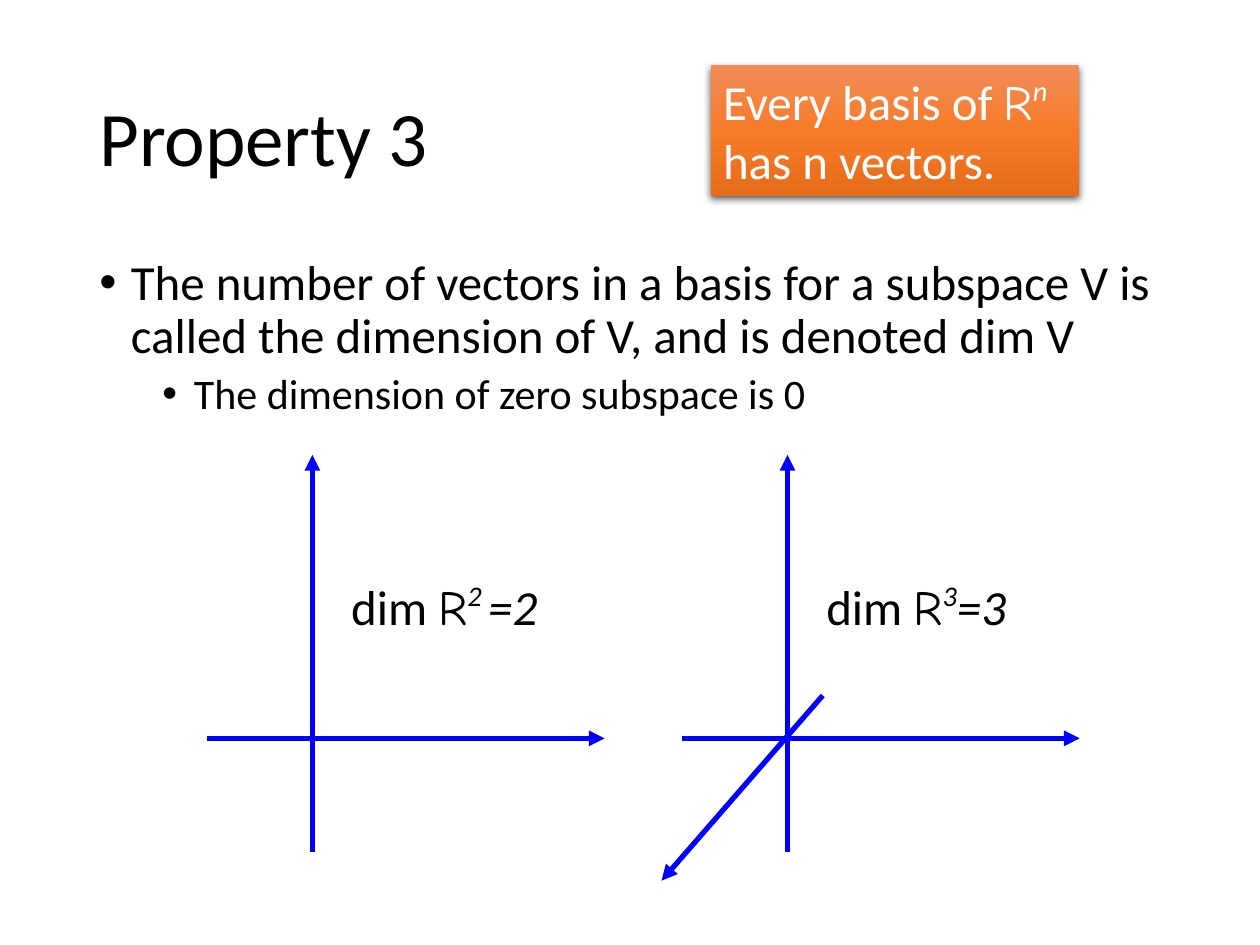
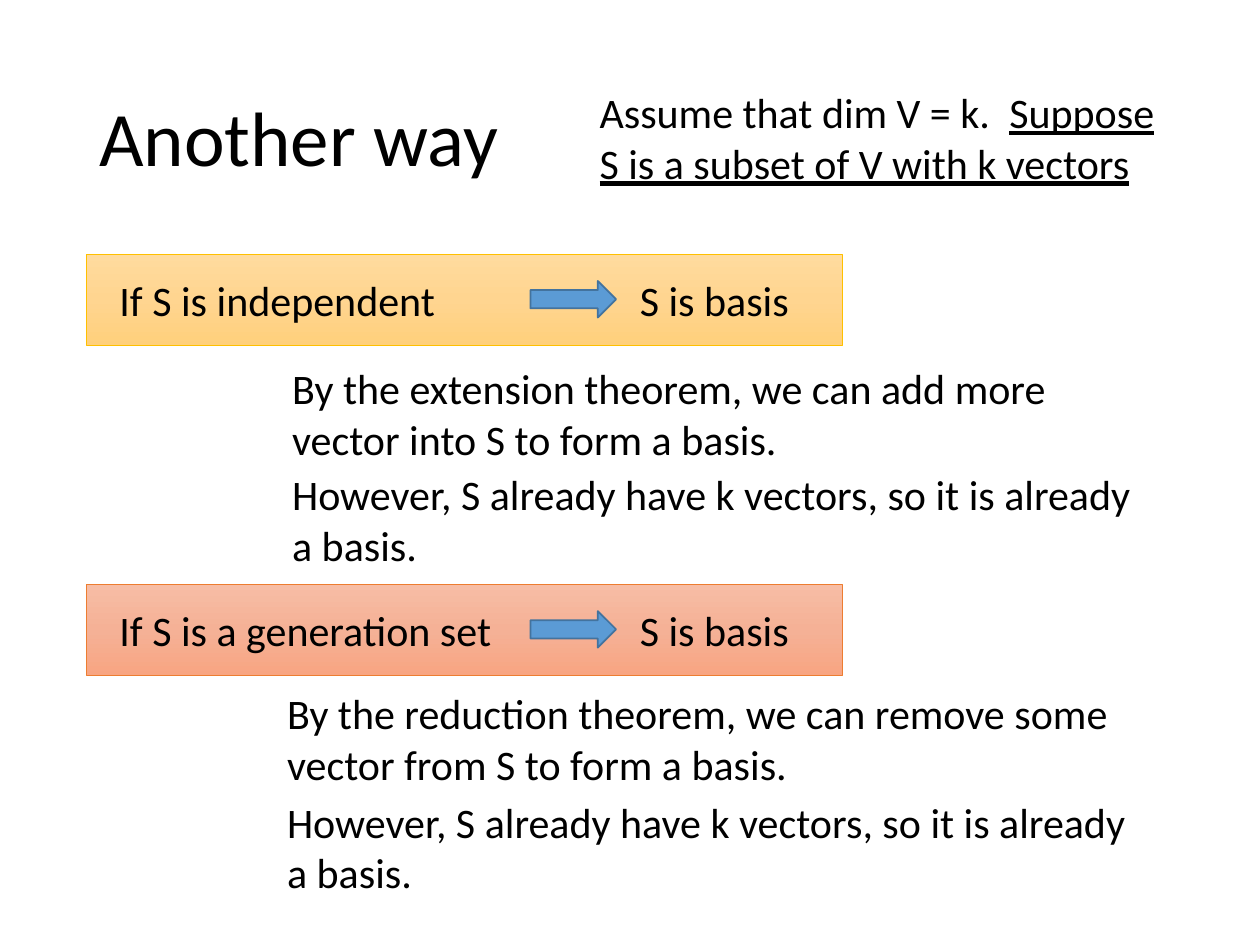
import copy
import pptx
import pptx.util
import pptx.dml.color
import pptx.enum.shapes
import pptx.enum.text
import pptx.oxml
import pptx.oxml.ns

Pt = pptx.util.Pt
qn = pptx.oxml.ns.qn
RGB = pptx.dml.color.RGBColor.from_string
SHAPE = pptx.enum.shapes.MSO_SHAPE
ANCHOR = pptx.enum.text.MSO_ANCHOR
NS = pptx.oxml.ns.nsdecls("a")

COLORS = {
    "ink": "000000", "paper": "FFFFFF", "axis": "0000FF",
    "arrow": "5B9BD5", "arrow edge": "43739E",
    "gold edge": "FFC000", "orange edge": "ED7D31",
}
GRADIENTS = {
    "theorem": ("F18C57", "F67B28", "E56C19"),
    "gold": ("FFDB9E", "FFD590", "FFD07C"),
    "orange": ("F7BDA5", "F5B196", "F8A582"),
}
TITLE_BOX = (49.68, 28.8, 620.64, 104.4)
BODY_BOX = (49.68, 144, 620.64, 342.72)


def write(target, text, at=None, size=24, font="Calibri", color="ink", italic=False,
          underline=False, raised=0, wrap=True, anchor=ANCHOR.TOP, spacing=1.0):
    paragraph = target
    if at:
        frame = target.add_textbox(*map(Pt, at)).text_frame
        frame.word_wrap = wrap
        frame.vertical_anchor = anchor
        paragraph = frame.paragraphs[0]
        paragraph.line_spacing = spacing
    run = paragraph.add_run()
    run.text = text
    run.font.size = Pt(size)
    run.font.name = font
    run.font.color.rgb = RGB(COLORS[color])
    run.font.italic = italic
    run.font.underline = underline
    if raised:
        run.font._element.set("baseline", str(raised * 1000))
    return paragraph


def gradient_box(shapes, at, gradient):
    box = shapes.add_shape(SHAPE.RECTANGLE, *map(Pt, at))
    box.shadow.inherit = False
    box.fill.gradient()
    box.fill.gradient_angle = 270
    first_stop = box._element.spPr.find(".//" + qn("a:gs"))
    middle_stop = copy.deepcopy(first_stop)
    middle_stop.set("pos", "50000")
    first_stop.addnext(middle_stop)
    for stop, color in zip(box.fill.gradient_stops, GRADIENTS[gradient]):
        stop.color.rgb = RGB(color)
    return box


deck = pptx.Presentation()
deck.slide_width, deck.slide_height = Pt(720), Pt(540)
slides = []
for title in ("Property 3", "Another way"):
    slide = deck.slides.add_slide(deck.slide_layouts[6])
    write(slide.shapes, title, at=TITLE_BOX, size=44, anchor=ANCHOR.MIDDLE, spacing=0.9)
    slides.append(slide)
dimension, another_way = (slide.shapes for slide in slides)

definition = write(
    dimension,
    "The number of vectors in a basis for a subspace V is called the dimension of V, "
    "and is denoted dim V",
    at=BODY_BOX, size=28, spacing=0.9)
zero_case = definition._parent.add_paragraph()
zero_case.line_spacing = 0.9
write(zero_case, "The dimension of zero subspace is 0")
for point, indent, gap in ((definition, 18, 10), (zero_case, 54, 5)):
    point.space_before = Pt(gap)
    properties = point._element.get_or_add_pPr()
    properties.set("marL", str(Pt(indent)))
    properties.set("indent", str(Pt(-18)))
    properties.append(pptx.oxml.parse_xml(f'<a:buFont {NS} typeface="Arial"/>'))
    properties.append(pptx.oxml.parse_xml(f'<a:buChar {NS} char="•"/>'))

axes = []
for index, (power, value) in enumerate((("2 ", "=2"), ("3", "=3"))):
    shift = index * 271.5
    axes.append((118.3 + shift, 421.92, 345.5 + shift, 421.92))
    axes.append((178.5 + shift, 486.72, 178.5 + shift, 259.92))
    label = write(dimension, "dim ", at=(193.6 + shift, 326.16, 136.8, 41.04),
                  size=28, wrap=False)
    write(label, "R", size=28, font="Comic Neue")
    write(label, power, size=28, italic=True, raised=40)
    write(label, value, size=28, italic=True)
axes.append((470.16, 397.44, 378, 503.28))

for ends in axes:
    axis = dimension.add_connector(pptx.enum.shapes.MSO_CONNECTOR.STRAIGHT, *map(Pt, ends))
    axis.line.color.rgb = RGB(COLORS["axis"])
    axis.line.width = Pt(3)
    axis.line._get_or_add_ln().append(
        pptx.oxml.parse_xml(f'<a:tailEnd {NS} type="triangle"/>'))
    axis._element.spPr.append(pptx.oxml.parse_xml(f"<a:effectLst {NS}/>"))

theorem = gradient_box(dimension, (406.08, 37.44, 210.24, 74.88), "theorem")
theorem.line.fill.background()
theorem._element.spPr.find(qn("a:effectLst")).append(pptx.oxml.parse_xml(
    f'<a:outerShdw {NS} blurRad="{Pt(4.5)}" dist="{Pt(1.5)}" dir="5400000" '
    'algn="ctr" rotWithShape="0"><a:srgbClr val="000000"><a:alpha val="63000"/>'
    '</a:srgbClr></a:outerShdw>'))
theorem.text_frame.word_wrap = True
theorem.text_frame.vertical_anchor = ANCHOR.TOP
statement = theorem.text_frame.paragraphs[0]
statement.alignment = pptx.enum.text.PP_ALIGN.LEFT
write(statement, "Every basis of ", size=28, color="paper")
write(statement, "R", size=28, color="paper", font="Comic Neue")
write(statement, "n", size=28, color="paper", italic=True, raised=40)
write(statement, " has n vectors.", size=28, color="paper")

assumption = write(another_way, "Assume that dim V = k.  ", at=(335.52, 46.08, 346.32, 65.52))
write(assumption, "Suppose S is a subset of V with k vectors", underline=True)

cases = (
    ("If S is independent", "gold", 145.44, 159.84, (203.76, 264.24),
     "By the extension theorem, we can add more vector into S to form a basis."),
    ("If S is a generation set", "orange", 334.08, 156.96, (389.52, 451.44),
     "By the reduction theorem, we can remove some vector from S to form a basis."),
)
for condition, hue, top, reason_left, reason_tops, reason in cases:
    case = another_way.add_group_shape().shapes
    band = gradient_box(case, (49.68, top, 432, 51.84), hue)
    band.line.color.rgb = RGB(COLORS[hue + " edge"])
    band.line.width = Pt(0.5)
    write(case, condition, at=(61.2, top + 7.92, 230.4, 36))
    write(case, "S is basis", at=(358.56, top + 7.92, 110.88, 36))
    implies = case.add_shape(SHAPE.RIGHT_ARROW, Pt(303.12), Pt(top + 15.12), Pt(48.96), Pt(20.88))
    implies.shadow.inherit = False
    implies.fill.solid()
    implies.fill.fore_color.rgb = RGB(COLORS["arrow"])
    implies.line.color.rgb = RGB(COLORS["arrow edge"])
    implies.line.width = Pt(1)
    conclusion = "However, S already have k vectors, so it is already a basis."
    for reason_top, sentence in zip(reason_tops, (reason, conclusion)):
        write(another_way, sentence, at=(reason_left, reason_top, 497.52, 65.52))

deck.save("out.pptx")
